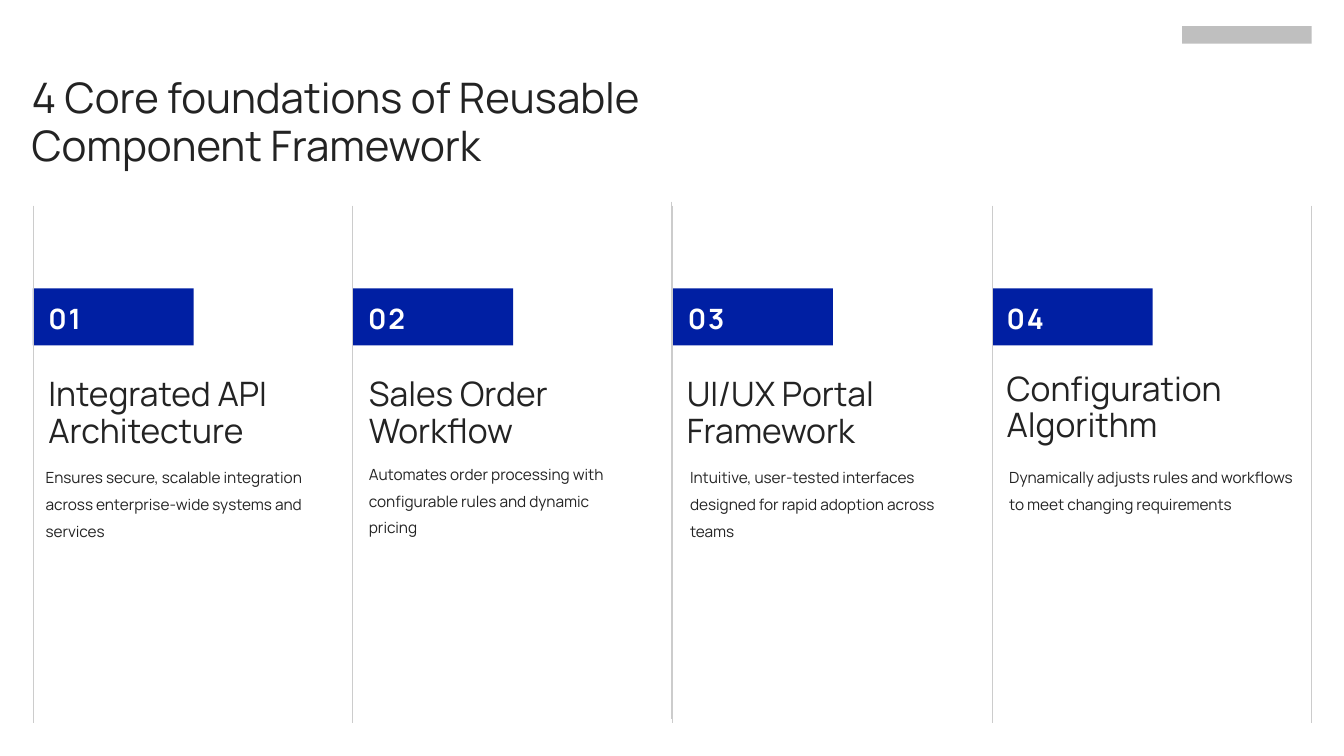
from dataclasses import dataclass

from lxml.etree import SubElement
from pptx import Presentation
from pptx.dml.color import RGBColor
from pptx.enum.shapes import MSO_CONNECTOR, MSO_SHAPE
from pptx.oxml.ns import qn
from pptx.util import Inches, Pt

BLUE = RGBColor(0x00, 0x1F, 0xA3)
INK = RGBColor(0x23, 0x23, 0x23)
RULE = RGBColor(0xCC, 0xCC, 0xCC)
GREY = RGBColor(0xBF, 0xBF, 0xBF)
WHITE = RGBColor(0xFF, 0xFF, 0xFF)


@dataclass
class Style:
    size: float
    lead: float
    color: RGBColor = INK
    bold: bool = False
    track: int = 0  # hundredths of a point


HEAD = Style(45, 51.2)
NUM = Style(30, 42, WHITE, True, 210)
NAME = Style(36, 39.1)
NOTE = Style(16.5, 28.6)


class Deck:
    font = "Manrope"

    def __init__(self, slide):
        self.slide = slide

    def bar(self, x, y, w, h, color):
        box = self.slide.shapes.add_shape(
            MSO_SHAPE.RECTANGLE, Inches(x), Inches(y), Inches(w), Inches(h))
        box.shadow.inherit = False
        box.fill.solid()
        box.fill.fore_color.rgb = color
        box.line.fill.background()

    def rule(self, x, top, tall):
        line = self.slide.shapes.add_connector(
            MSO_CONNECTOR.STRAIGHT, Inches(x), Inches(top),
            Inches(x), Inches(top + tall))
        line.line.color.rgb = RULE
        line.line.width = Pt(0.75)
        SubElement(line._element.spPr, qn("a:effectLst"))

    def text(self, x, y, w, h, *parts, pad=False, gap=0):
        """Add one paragraph per (words, style) pair, gap points apart."""
        box = self.slide.shapes.add_textbox(
            Inches(x), Inches(y), Inches(w), Inches(h))
        frame = box.text_frame
        frame.word_wrap = True
        if not pad:
            frame.margin_left = frame.margin_right = 0
            frame.margin_top = frame.margin_bottom = 0
        for i, (words, style) in enumerate(parts):
            para = frame.add_paragraph() if i else frame.paragraphs[0]
            para.line_spacing = Pt(style.lead)
            if i:
                para.space_before = Pt(gap)
            run = para.add_run()
            run.text = words
            run.font.name = self.font
            run.font.size = Pt(style.size)
            run.font.bold = style.bold
            run.font.color.rgb = style.color
            if style.track:
                run._r.get_or_add_rPr().set("spc", str(style.track))


LEFT, RIGHT, COLS = 0.49, 19.52, 4
STEP = (RIGHT - LEFT) / COLS
TOP, TALL = 3.06, 7.7

# Name and its box (left, width); the last name sits under its number.
NAMES = [
    ("Integrated API Architecture", 0.72, 4.2),
    ("Sales Order Workﬂow", 5.49, 3.07),
    ("UI/UX Portal Framework", 10.22, 3.69),
]
# Note, its box (left, width, height) and whether the box has insets.
NOTES = [
    ("Ensures secure, scalable integration across enterprise-wide "
     "systems and services", 0.58, 4.32, 1.32, True),
    ("Automates order processing with conﬁgurable rules and dynamic "
     "pricing", 5.49, 3.94, 1.17, False),
    ("Intuitive, user-tested interfaces designed for rapid adoption "
     "across teams", 10.17, 4.52, 1.32, True),
    ("Dynamically adjusts rules and workﬂows to meet changing "
     "requirements", 14.92, 4.61, 1.32, True),
]


def main():
    prs = Presentation()
    prs.slide_width, prs.slide_height = Inches(20), Inches(11.25)
    deck = Deck(prs.slides.add_slide(prs.slide_layouts[6]))

    for i in range(COLS):
        deck.bar(LEFT + i * STEP, 4.29, 2.39, 0.85, BLUE)
    for i in range(COLS + 1):
        deck.rule(LEFT + i * STEP, TOP, TALL)
    deck.rule(9.99, 3, TALL)
    deck.bar(17.59, 0.39, 1.93, 0.26, GREY)

    deck.text(0.47, 1.1, 10.25, 1.48,
              ("4 Core foundations of Reusable Component Framework", HEAD))
    for i, (name, x, w) in enumerate(NAMES):
        deck.text(0.72 + i * STEP, 4.4, 0.59, 0.56, (f"0{i + 1}", NUM))
        deck.text(x, 5.61, w, 1.1, (name, NAME))
    deck.text(14.98, 4.4, 3.66, 2.23, ("04", NUM),
              ("Conﬁguration Algorithm", NAME), gap=NAME.lead)
    for note, x, w, h, pad in NOTES:
        deck.text(x, 6.8, w, h, (note, NOTE), pad=pad)

    prs.save("out.pptx")


if __name__ == "__main__":
    main()
